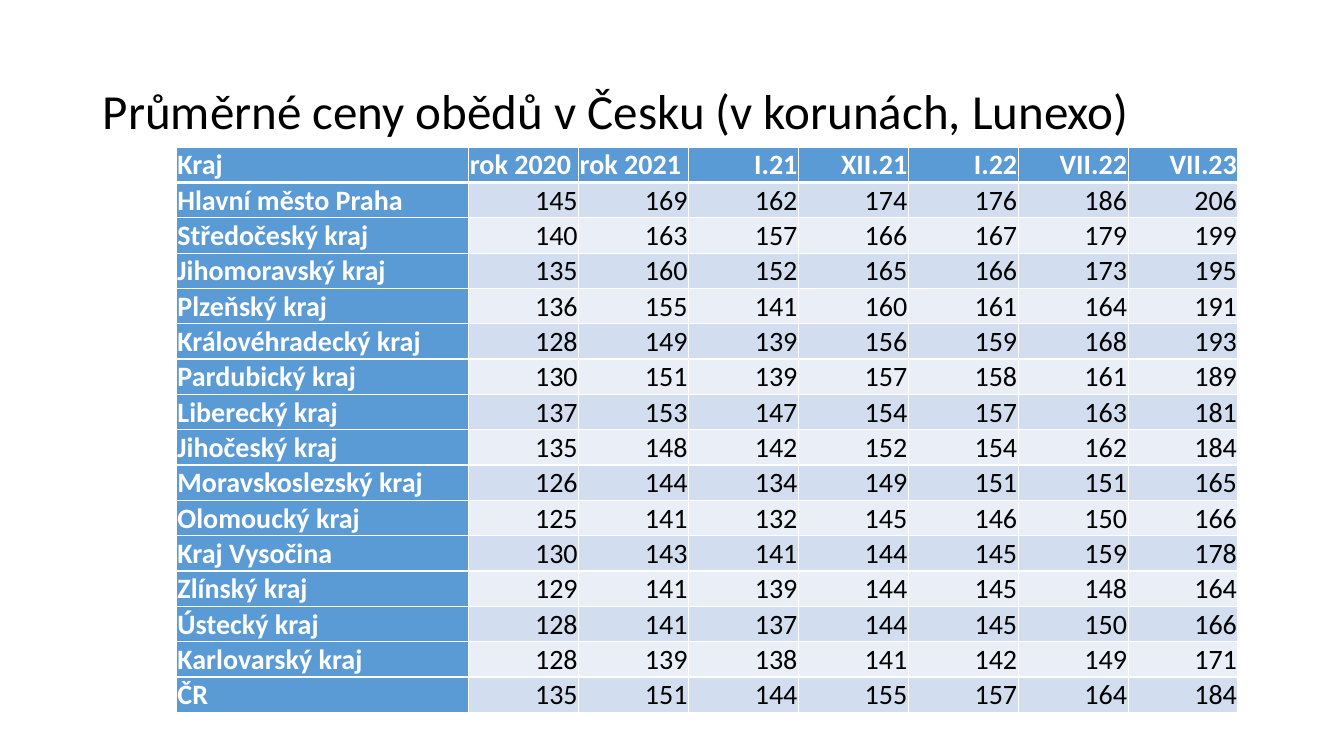
"""Build a slide with a table of average lunch prices by Czech region."""
import pptx
import pptx.dml.color
import pptx.enum.text
import pptx.oxml
import pptx.oxml.ns
import pptx.util

PX = 9144
FONT = "Calibri"
WHITE, BLACK, BLUE = "FFFFFF", "000000", "5B9BD5"
BANDS = ("D2DEEF", "EAEFF7")
ALIGN = pptx.enum.text.PP_ALIGN
MIDDLE = pptx.enum.text.MSO_ANCHOR.MIDDLE

HEADS = ("Kraj", "rok 2020", "rok 2021", "I.21", "XII.21", "I.22", "VII.22", "VII.23")
PRICES = (
    ("Hlavní město Praha", 145, 169, 162, 174, 176, 186, 206),
    ("Středočeský kraj", 140, 163, 157, 166, 167, 179, 199),
    ("Jihomoravský kraj", 135, 160, 152, 165, 166, 173, 195),
    ("Plzeňský kraj", 136, 155, 141, 160, 161, 164, 191),
    ("Královéhradecký kraj", 128, 149, 139, 156, 159, 168, 193),
    ("Pardubický kraj", 130, 151, 139, 157, 158, 161, 189),
    ("Liberecký kraj", 137, 153, 147, 154, 157, 163, 181),
    ("Jihočeský kraj", 135, 148, 142, 152, 154, 162, 184),
    ("Moravskoslezský kraj", 126, 144, 134, 149, 151, 151, 165),
    ("Olomoucký kraj", 125, 141, 132, 145, 146, 150, 166),
    ("Kraj Vysočina", 130, 143, 141, 144, 145, 159, 178),
    ("Zlínský kraj", 129, 141, 139, 144, 145, 148, 164),
    ("Ústecký kraj", 128, 141, 137, 144, 145, 150, 166),
    ("Karlovarský kraj", 128, 139, 138, 141, 142, 149, 171),
    ("ČR", 135, 151, 144, 155, 157, 164, 184),
)


def px(num):
    return pptx.util.Emu(num * PX)


def color(code):
    return pptx.dml.color.RGBColor.from_string(code)


def add_run(para, text, size, code, bold=False):
    run = para.add_run()
    run.text = text
    run.font.name = FONT
    run.font.size = pptx.util.Pt(size)
    run.font.bold = bold
    run.font.color.rgb = color(code)


def add_title(slide, text, left, top, width, height):
    title = slide.shapes.title
    title.left, title.top = px(left), px(top)
    title.width, title.height = px(width), px(height)
    frame = title.text_frame
    frame.auto_size = pptx.enum.text.MSO_AUTO_SIZE.NONE
    frame.vertical_anchor = MIDDLE
    para = frame.paragraphs[0]
    para.alignment = ALIGN.LEFT
    para.line_spacing = 0.9
    add_run(para, text, 35, BLACK)


def add_edges(cell, base):
    props = cell._tc.get_or_add_tcPr()
    space = pptx.oxml.ns.nsdecls("a")
    for side, points in (("L", 1), ("R", 1), ("T", 1), ("B", base)):
        props.append(pptx.oxml.parse_xml(
            f'<a:ln{side} {space} w="{pptx.util.Pt(points)}"><a:solidFill>'
            f'<a:srgbClr val="{WHITE}"/></a:solidFill></a:ln{side}>'))


def fill_cell(cell, text, row, col):
    label = row == 0 or col == 0
    add_edges(cell, 3 if row == 0 else 1)
    cell.fill.solid()
    cell.fill.fore_color.rgb = color(BLUE if label else BANDS[(row - 1) % 2])
    cell.margin_left = cell.margin_top = cell.margin_right = px(1)
    cell.margin_bottom = 0
    cell.vertical_anchor = MIDDLE
    para = cell.text_frame.paragraphs[0]
    left = col == 0 or (row == 0 and col < 3)
    para.alignment = ALIGN.LEFT if left else ALIGN.RIGHT
    add_run(para, text, 20, WHITE if label else BLACK, label)


def add_prices(slide, left, top, first, wide, high):
    rows = (HEADS,) + PRICES
    widths = [first] + [wide] * (len(HEADS) - 1)
    frame = slide.shapes.add_table(
        len(rows), len(HEADS), px(left), px(top), px(sum(widths)), px(high * len(rows)))
    table = frame.table
    table.first_col = True
    for column, width in zip(table.columns, widths):
        column.width = px(width)
    for row, values in enumerate(rows):
        table.rows[row].height = px(high)
        for col, value in enumerate(values):
            fill_cell(table.cell(row, col), str(value), row, col)


def main():
    deck = pptx.Presentation()
    deck.slide_width, deck.slide_height = px(1333), px(750)
    slide = deck.slides.add_slide(deck.slide_layouts[5])
    add_title(slide, "Průměrné ceny obědů v Česku (v korunách, Lunexo)", 92, 40, 1150, 145)
    add_prices(slide, 175, 146, 290, 109, 34)
    deck.save("out.pptx")


if __name__ == "__main__":
    main()
